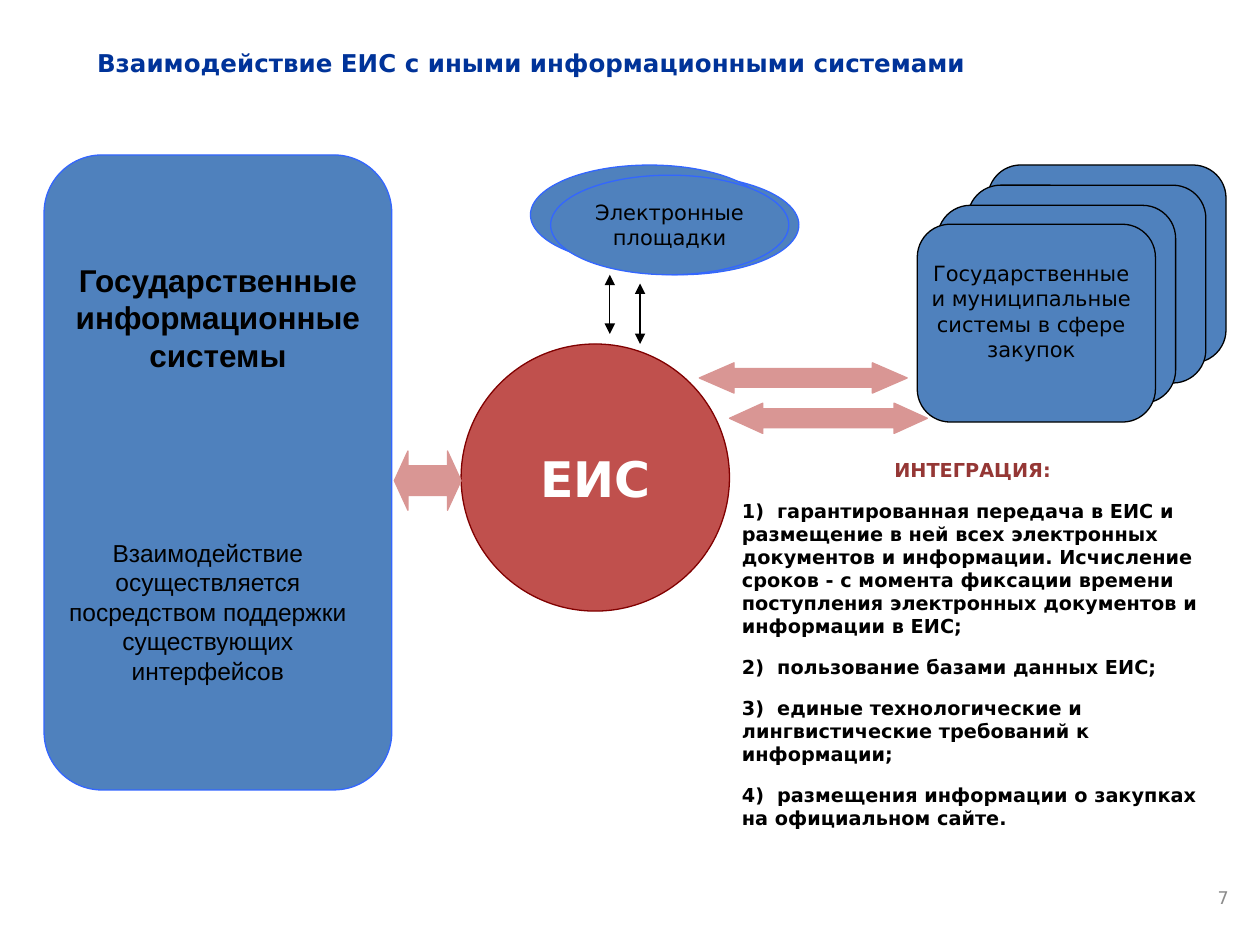
from dataclasses import dataclass

from lxml import etree
from pptx import Presentation
from pptx.dml.color import RGBColor
from pptx.enum.shapes import MSO_CONNECTOR, MSO_SHAPE
from pptx.enum.text import MSO_ANCHOR, MSO_AUTO_SIZE, PP_ALIGN
from pptx.oxml.ns import qn
from pptx.util import Pt

EMU_PER_PX = 9144
ELLIPSE = MSO_SHAPE.OVAL
CARD = MSO_SHAPE.ROUNDED_RECTANGLE
DOUBLE_ARROW = MSO_SHAPE.LEFT_RIGHT_ARROW
STRAIGHT = MSO_CONNECTOR.STRAIGHT
LEFT, CENTER, RIGHT = PP_ALIGN.LEFT, PP_ALIGN.CENTER, PP_ALIGN.RIGHT
TOP, MIDDLE = MSO_ANCHOR.TOP, MSO_ANCHOR.MIDDLE
FIXED_SIZE = MSO_AUTO_SIZE.NONE


@dataclass(frozen=True)
class Theme:
    main_font: str = "DejaVu Sans"
    panel_font: str = "Arial"
    title: str = "003399"
    text: str = "000000"
    light_text: str = "FFFFFF"
    heading: str = "953735"
    page_number: str = "8C8C8C"
    system: str = "4F81BD"
    system_line: str = "3366FF"
    hub: str = "C0504D"
    hub_line: str = "800000"
    exchange: str = "D99694"
    hub_size: int = 28
    panel_size: int = 18
    title_size: int = 14
    label_size: int = 12
    list_size: int = 11
    number_size: int = 10
    line_width: float = 0.75


THEME = Theme()


def px(value):
    return value * EMU_PER_PX


def color(value):
    return RGBColor.from_string(value)


def write_text(shape, *lines, size=THEME.label_size, font=THEME.main_font,
               fill=THEME.text, bold=False, align=CENTER, anchor=TOP, wrap=True):
    frame = shape.text_frame
    frame.word_wrap = wrap
    frame.auto_size = FIXED_SIZE
    frame.vertical_anchor = anchor
    for index, line in enumerate(lines):
        paragraph = frame.add_paragraph() if index else frame.paragraphs[0]
        paragraph.alignment = align
        run = paragraph.add_run()
        run.text = line
        run.font.name = font
        run.font.size = Pt(size)
        run.font.bold = bold
        run.font.color.rgb = color(fill)
    return frame


def add_label(slide, box, *lines, **text_format):
    shape = slide.shapes.add_textbox(*map(px, box))
    return write_text(shape, *lines, **text_format)


def add_figure(shapes, kind, box, fill, line, adjustments=()):
    shape = shapes.add_shape(kind, *map(px, box))
    shape.shadow.inherit = False
    shape.fill.solid()
    shape.fill.fore_color.rgb = color(fill)
    shape.line.color.rgb = color(line)
    shape.line.width = Pt(THEME.line_width)
    for index, value in enumerate(adjustments):
        shape.adjustments[index] = value
    return shape


def add_two_way_line(slide, x, top, bottom):
    connector = slide.shapes.add_connector(STRAIGHT, px(x), px(top), px(x), px(bottom))
    connector.line.color.rgb = color(THEME.text)
    connector.line.width = Pt(THEME.line_width)
    outline = connector.line._get_or_add_ln()
    for end in ("a:headEnd", "a:tailEnd"):
        etree.SubElement(outline, qn(end), type="triangle")
    etree.SubElement(connector._element.spPr, qn("a:effectLst"))


def add_title(slide):
    title = slide.shapes.title
    title.left, title.top, title.width, title.height = map(px, (67, 33, 929, 34))
    write_text(title, "Взаимодействие ЕИС с иными информационными системами",
               size=THEME.title_size, fill=THEME.title, bold=True, align=LEFT)


def add_hub(slide):
    hub = add_figure(slide.shapes, ELLIPSE, (366, 273, 213, 212), THEME.hub, THEME.hub_line)
    write_text(hub, "ЕИС", size=THEME.hub_size, fill=THEME.light_text, bold=True,
               anchor=MIDDLE, wrap=False)


def add_state_systems(slide):
    add_figure(slide.shapes, CARD, (35, 123, 276, 504), THEME.system, THEME.system_line)
    add_label(slide, (43, 202, 260, 100), "Государственные информационные системы",
              size=THEME.panel_size, font=THEME.panel_font, bold=True)
    add_label(slide, (43, 422, 244, 126),
              "Взаимодействие осуществляется посредством поддержки существующих интерфейсов",
              size=THEME.title_size, font=THEME.panel_font)


def add_procurement_systems(slide):
    stack = slide.shapes.add_group_shape()
    for left, top in ((784, 131), (768, 147), (744, 163), (728, 178)):
        add_figure(stack.shapes, CARD, (left, top, 189, 157), THEME.system, THEME.text)
    add_label(slide, (728, 202, 181, 91),
              "Государственные и муниципальные системы в сфере закупок")


def add_trading_platforms(slide):
    for left, top in ((445, 139), (421, 131), (437, 139)):
        platform = add_figure(slide.shapes, ELLIPSE, (left, top, 189, 79),
                              THEME.system, THEME.system_line)
    write_text(platform, "Электронные", "площадки", anchor=MIDDLE, wrap=False)


def add_exchanges(slide):
    arrows = (
        ((313, 358, 53, 47), (0.5, 0.23)),
        ((555, 288, 165, 24), (0.62, 1.15)),
        ((579, 320, 157, 24), (0.62, 1.1)),
    )
    for box, adjustments in arrows:
        add_figure(slide.shapes, DOUBLE_ARROW, box, THEME.exchange, THEME.exchange, adjustments)
    add_two_way_line(slide, 484, 218, 265)
    add_two_way_line(slide, 508, 225, 273)


def add_integration_list(slide):
    items = (
        "гарантированная передача в ЕИС и размещение в ней всех электронных документов "
        "и информации. Исчисление сроков - с момента фиксации времени поступления "
        "электронных документов и информации в ЕИС;",
        "пользование базами данных ЕИС;",
        "единые технологические и лингвистические требований к информации;",
        "размещения информации о закупках на официальном сайте.",
    )
    numbered = [f"{number})\t{item}" for number, item in enumerate(items, 1)]
    frame = add_label(slide, (579, 359, 386, 307), "ИНТЕГРАЦИЯ:", *numbered,
                      size=THEME.list_size, bold=True, align=LEFT)
    heading, *entries = frame.paragraphs
    heading.alignment = CENTER
    heading.runs[0].font.color.rgb = color(THEME.heading)
    for paragraph in entries:
        paragraph.space_before = Pt(10)
        tabs = etree.SubElement(paragraph._p.get_or_add_pPr(), qn("a:tabLst"))
        etree.SubElement(tabs, qn("a:tab"), pos=str(px(28)), algn="l")


def main():
    presentation = Presentation()
    presentation.slide_width, presentation.slide_height = px(1000), px(750)
    slide = presentation.slides.add_slide(presentation.slide_layouts[5])
    add_title(slide)
    add_hub(slide)
    add_state_systems(slide)
    add_procurement_systems(slide)
    add_trading_platforms(slide)
    add_exchanges(slide)
    add_integration_list(slide)
    add_label(slide, (752, 692, 233, 40), "7", size=THEME.number_size,
              fill=THEME.page_number, align=RIGHT, anchor=MIDDLE)
    presentation.save("out.pptx")


if __name__ == "__main__":
    main()
